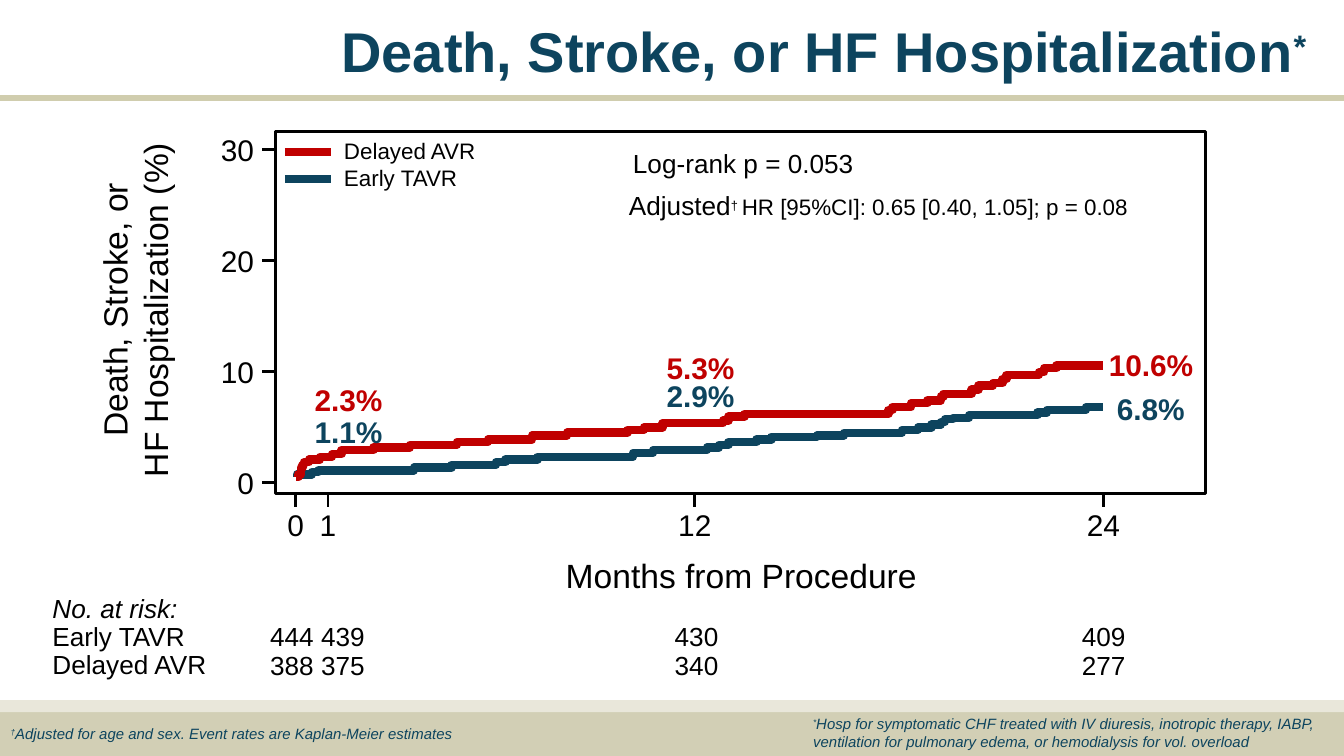
from pptx import Presentation
from pptx import util as u
from pptx.dml.color import RGBColor
from pptx.enum import shapes, text
from pptx.oxml.ns import qn
from lxml import etree

NAVY, RED, BLACK = "0D445E", "C00000", "000000"
LEFT, MID, RIGHT = text.PP_ALIGN.LEFT, text.PP_ALIGN.CENTER, text.PP_ALIGN.RIGHT


def color(code):
    return RGBColor.from_string(code)


class Deck:
    font = "Arial"

    def __init__(self, wide):
        self.prs = Presentation()
        self.prs.slide_width = u.Inches(wide)
        self.prs.slide_height = u.Inches(wide * 9 / 16)
        self.slide = self.prs.slides.add_slide(self.prs.slide_layouts[5])

    def style(self, run, size, ink, bold=False, slant=False, base=0):
        font = run.font
        font.name, font.size = self.font, u.Pt(size)
        font.bold, font.italic = bold, slant
        font.color.rgb = color(ink)
        if base:
            run._r.get_or_add_rPr().set("baseline", str(base * 1000))

    def place(self, shape, box):
        shape.left, shape.top, shape.width, shape.height = map(u.Inches, box)
        frame = shape.text_frame
        frame.margin_left = frame.margin_right = 0
        frame.margin_top = frame.margin_bottom = 0
        frame.word_wrap = True
        frame.auto_size = text.MSO_AUTO_SIZE.NONE
        frame.vertical_anchor = text.MSO_ANCHOR.TOP
        return frame

    def title(self, box, words, mark, size):
        para = self.place(self.slide.shapes.title, box).paragraphs[0]
        para.text = words
        para.alignment = LEFT
        self.style(para.runs[0], size, NAVY, True)
        self.add(para, mark, size, NAVY, bold=True, base=25)

    def add(self, para, words, size, ink, **looks):
        run = para.add_run()
        run.text = words
        self.style(run, size, ink, **looks)

    def label(self, box, words, size, ink=BLACK, align=LEFT, lead=None, **looks):
        shape = self.slide.shapes.add_textbox(*map(u.Inches, box))
        frame = self.place(shape, box)
        frame.text = words
        for para in frame.paragraphs:
            para.alignment = align
            if lead:
                para.line_spacing = lead
            for run in para.runs:
                self.style(run, size, ink, **looks)
        return frame

    def note(self, box, mark, words):
        para = self.label(box, mark, 7.5, NAVY, slant=True, base=28).paragraphs[0]
        self.add(para, words, 8, NAVY, slant=True)

    def block(self, box, fill=None, edge=None):
        shape = self.slide.shapes.add_shape(
            shapes.MSO_SHAPE.RECTANGLE, *map(u.Inches, box))
        shape.shadow.inherit = False
        if fill:
            shape.fill.solid()
            shape.fill.fore_color.rgb = color(fill)
            shape.line.fill.background()
        else:
            shape.fill.background()
            shape.line.color.rgb = color(edge)
            shape.line.width = u.Pt(1.5)

    def line(self, ends, ink=BLACK, width=1.5):
        link = self.slide.shapes.add_connector(
            shapes.MSO_CONNECTOR.STRAIGHT, *map(u.Inches, ends))
        link.line.color.rgb = color(ink)
        link.line.width = u.Pt(width)
        etree.SubElement(link._element.spPr, qn("a:effectLst"))

    def curve(self, steps, ink, level=3.55, start=2.2, end=8.21):
        pen = self.slide.shapes.build_freeform(u.Inches(start), u.Inches(level))
        points = []
        for x, y in steps:
            points += [(x, level), (x, y)]
            level = y
        points.append((end, level))
        pen.add_line_segments(
            [(u.Inches(x), u.Inches(y)) for x, y in points], close=False)
        shape = pen.convert_to_shape()
        shape.shadow.inherit = False
        shape.fill.background()
        shape.line.color.rgb = color(ink)
        shape.line.width = u.Pt(4.5)


EARLY = [
    (2.21, 3.53), (2.32, 3.51), (2.37, 3.5), (3.08, 3.48), (3.36, 3.46),
    (3.69, 3.44), (3.76, 3.42), (4, 3.4), (4.71, 3.37), (4.86, 3.35),
    (5.26, 3.33), (5.35, 3.31), (5.42, 3.29), (5.63, 3.27), (5.74, 3.25),
    (6.08, 3.24), (6.28, 3.22), (6.71, 3.2), (6.83, 3.18), (6.93, 3.16),
    (7, 3.14), (7.03, 3.12), (7.09, 3.11), (7.21, 3.09), (7.72, 3.07),
    (7.79, 3.05), (8.08, 3.03)]
LATE = [
    (2.22, 3.53), (2.24, 3.48), (2.25, 3.46), (2.26, 3.44), (2.3, 3.42),
    (2.38, 3.4), (2.47, 3.38), (2.54, 3.35), (2.78, 3.33), (3.05, 3.31),
    (3.4, 3.29), (3.63, 3.27), (3.96, 3.24), (4.22, 3.22), (4.67, 3.2),
    (4.79, 3.18), (4.93, 3.15), (5.38, 3.13), (5.42, 3.1), (5.54, 3.08),
    (6.61, 3.05), (6.64, 3.03), (6.78, 3), (6.9, 2.98), (7, 2.95),
    (7.02, 2.93), (7.23, 2.9), (7.28, 2.87), (7.39, 2.85), (7.46, 2.82),
    (7.49, 2.79), (7.73, 2.77), (7.77, 2.74), (7.86, 2.72)]


def main():
    deck = Deck(10)
    deck.block((0, 5.3, 10, 0.33), "D2CFB5")
    deck.block((0, 5.21, 10, 0.09), "E9E7DA")
    deck.line((0, 0.73, 10, 0.73), "D0CDAE", 3)
    deck.title((2.54, 0.12, 7.35, 0.6),
               "Death, Stroke, or HF Hospitalization", "*", 30)

    deck.block((2.05, 0.98, 6.92, 2.69), edge=BLACK)
    for row, value in enumerate((30, 20, 10, 0)):
        y = 1.11 + row * 2.48 / 3
        deck.line((1.95, y, 2.05, y))
        deck.label((1.58, y - 0.13, 0.31, 0.27), str(value), 16, align=RIGHT)
    for month, x in ((0, 2.2), (1, 2.44), (12, 5.17), (24, 8.21)):
        deck.line((x, 3.67, x, 3.77))
        deck.label((x - 0.15, 3.77, 0.3, 0.27), str(month), 16, align=MID)
    deck.label((4.21, 4.13, 2.7, 0.3), "Months from Procedure", 18)
    side = deck.label((0.7, 1.04, 0.61, 2.51),
                      "Death, Stroke, or\vHF Hospitalization (%)", 18,
                      lead=u.Pt(21.6))
    side._txBody.bodyPr.set("vert", "vert270")
    side.paragraphs[0]._p.get_or_add_pPr().set("indent", str(u.Inches(0.3)))

    for y, name, ink in ((1.13, "Delayed AVR", RED), (1.33, "Early TAVR", NAVY)):
        deck.line((2.12, y, 2.46, y), ink, 4.5)
        deck.label((2.56, y - 0.11, 1.1, 0.21), name, 12)
    deck.curve(EARLY, NAVY)
    deck.curve(LATE, RED)

    for x, y, rate, ink in (
            (2.34, 2.84, "2.3%", RED), (2.34, 3.08, "1.1%", NAVY),
            (4.96, 2.6, "5.3%", RED), (4.96, 2.81, "2.9%", NAVY),
            (8.25, 2.58, "10.6%", RED), (8.31, 2.91, "6.8%", NAVY)):
        deck.label((x, y, 0.68, 0.27), rate, 16, ink, bold=True)

    deck.label((4.71, 1.1, 3, 0.24), "Log-rank p = 0.053", 14)
    ratio = deck.label((4.68, 1.41, 3.9, 0.24), "Adjusted", 14).paragraphs[0]
    deck.add(ratio, "† ", 12, BLACK, base=24)
    deck.add(ratio, "HR [95%CI]: 0.65 [0.40, 1.05]; p = 0.08", 12, BLACK)

    risk = deck.label((0.39, 4.44, 1.25, 0.65),
                      "No. at risk:\vEarly TAVR\vDelayed AVR", 14, lead=0.88)
    risk.paragraphs[0].runs[0].font.italic = True
    for x, counts in ((2.01, "444 439\n388 375"), (5.02, "430\n340"),
                      (8.05, "409\n277")):
        deck.label((x, 4.63, 0.75, 0.46), counts, 14, lead=u.Pt(15.7))

    deck.note((6.05, 5.32, 3.85, 0.29), "*",
              "Hosp for symptomatic CHF treated with IV diuresis, inotropic "
              "therapy, IABP, ventilation for pulmonary edema, or "
              "hemodialysis for vol. overload")
    deck.note((0.08, 5.39, 3.5, 0.15), "†",
              "Adjusted for age and sex. Event rates are Kaplan-Meier estimates")
    deck.prs.save("out.pptx")


if __name__ == "__main__":
    main()
